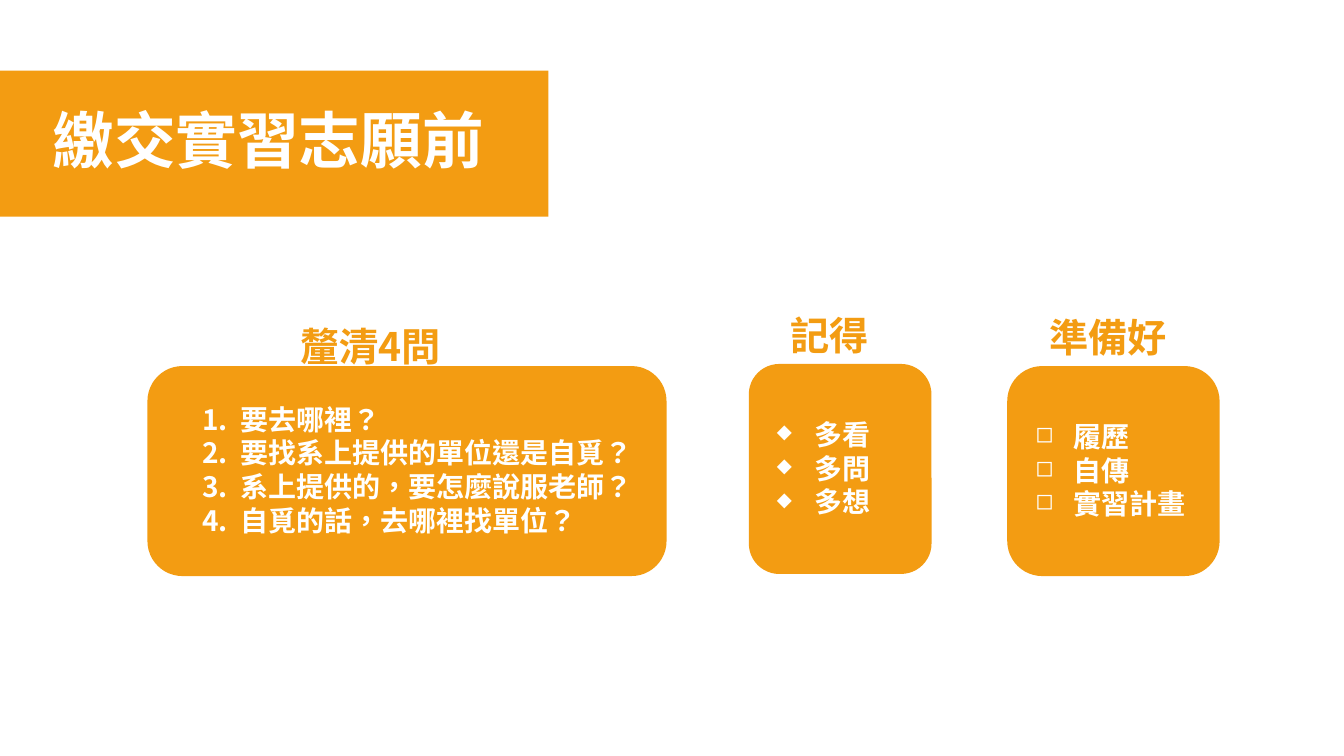
"""Build the slide on what to settle before submitting internship preferences."""
from lxml.etree import SubElement
from pptx import Presentation
from pptx.dml.color import RGBColor
from pptx.enum.shapes import MSO_SHAPE as Shape
from pptx.enum.text import MSO_ANCHOR as Anchor, PP_ALIGN as Align
from pptx.oxml.ns import qn
from pptx.util import Pt

ORANGE = RGBColor(0xF3, 0x9C, 0x12)
WHITE = RGBColor(0xFF, 0xFF, 0xFF)
FONT = "Noto Sans CJK SC"
LANGUAGE = "zh-TW"

TITLE = "繳交實習志願前"
TITLE_BOX = (0, 50.4, 391.7, 104.4)
NUMBERED = [("buAutoNum", {"type": "arabicPeriod"})]
DIAMOND = [("buSzPct", {"val": "70000"}), ("buChar", {"char": "◆"})]
CHECKBOX = [("buSzPct", {"val": "80000"}), ("buChar", {"char": "◻"})]

GROUPS = [
    {"heading": "釐清4問", "heading_box": (207.5, 226.8, 145, 41),
     "card": (105.3, 261.5, 370.8, 150), "list_box": (137.5, 284.4, 306, 104.4),
     "bullet": NUMBERED,
     "items": ["要去哪裡？", "要找系上提供的單位還是自覓？",
               "系上提供的，要怎麼說服老師？", "自覓的話，去哪裡找單位？"]},
    {"heading": "記得", "heading_box": (557.5, 218.9, 72, 41),
     "card": (534.9, 260, 130.5, 150), "list_box": (547.9, 295.2, 104.4, 80),
     "bullet": DIAMOND, "items": ["多看", "多問", "多想"]},
    {"heading": "準備好", "heading_box": (742.3, 220.3, 100, 41),
     "card": (719.5, 261.5, 151.7, 150), "list_box": (732.5, 296.6, 131.8, 80),
     "bullet": CHECKBOX, "items": ["履歷", "自傳", "實習計畫"]},
]

deck = Presentation()
deck.slide_width, deck.slide_height = Pt(960), Pt(540)
slide = deck.slides.add_slide(deck.slide_layouts[6])


def add_panel(preset, box):
    panel = slide.shapes.add_shape(preset, *map(Pt, box))
    panel.shadow.inherit = False
    panel.fill.solid()
    panel.fill.fore_color.rgb = ORANGE
    panel.line.fill.background()
    return panel


def add_text_box(box):
    return slide.shapes.add_textbox(*map(Pt, box))


def write(holder, lines, *, size, color, leading, left=7.2, anchor=Anchor.TOP, bullet=()):
    frame = holder.text_frame
    frame.word_wrap = True
    frame.vertical_anchor = anchor
    frame.margin_left, frame.margin_right = Pt(left), Pt(7.2)
    frame.margin_top = frame.margin_bottom = Pt(3)
    for index, line in enumerate(lines):
        paragraph = frame.add_paragraph() if index else frame.paragraphs[0]
        paragraph.alignment = Align.LEFT
        paragraph.line_spacing = Pt(leading)
        run = paragraph.add_run()
        run.text = line
        run.font.name, run.font.size, run.font.bold = FONT, Pt(size), True
        run.font.color.rgb = color
        run.font._element.set("lang", LANGUAGE)
        SubElement(run.font._element, qn("a:ea"), typeface=FONT)
        if bullet:
            properties = paragraph._p.get_or_add_pPr()
            properties.set("marL", str(Pt(27)))
            properties.set("indent", str(-Pt(27)))
            for tag, attributes in bullet:
                SubElement(properties, qn(f"a:{tag}"), **attributes)


banner = add_panel(Shape.RECTANGLE, TITLE_BOX)
write(banner, [TITLE], size=44, color=WHITE, leading=46, left=37.5, anchor=Anchor.MIDDLE)

for group in GROUPS:
    add_panel(Shape.ROUNDED_RECTANGLE, group["card"])
    write(add_text_box(group["heading_box"]), [group["heading"]],
          size=28, color=ORANGE, leading=34)
    write(add_text_box(group["list_box"]), group["items"],
          size=20, color=WHITE, leading=24, bullet=group["bullet"])

deck.save("out.pptx")
